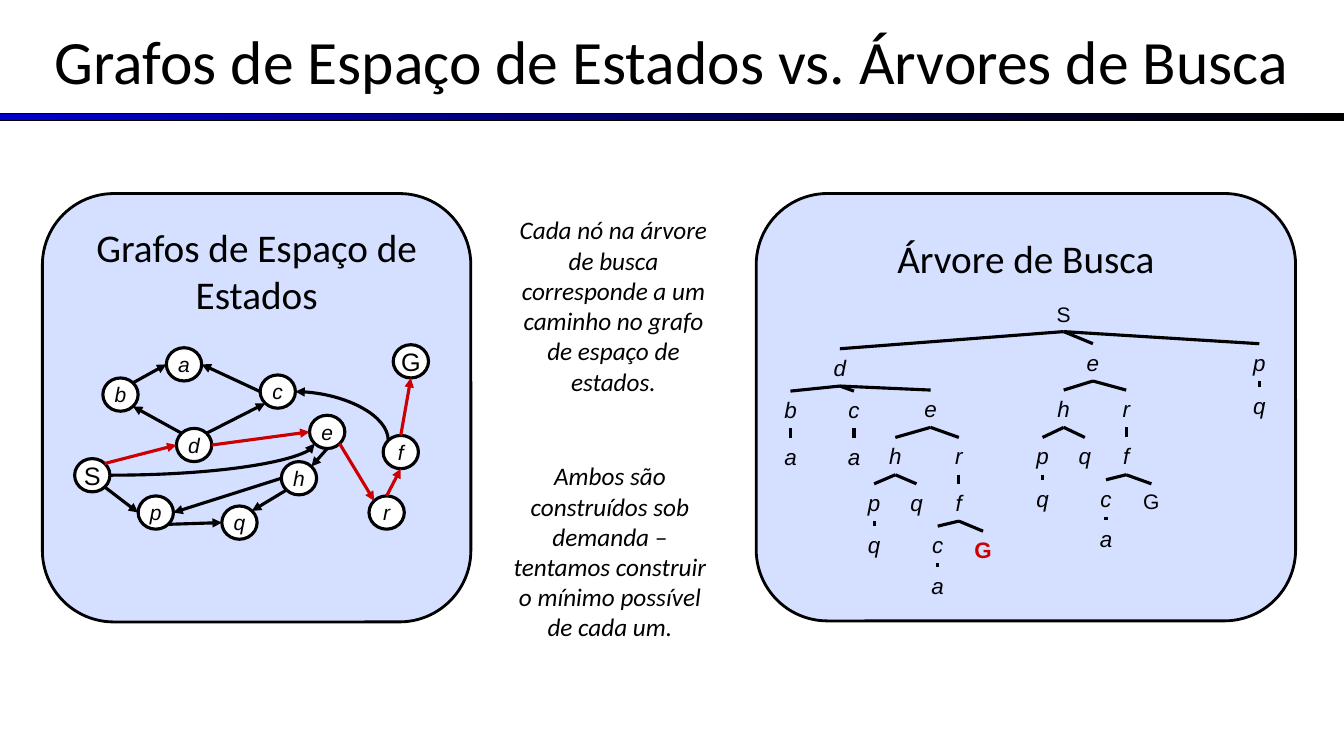
import math
import pptx
import pptx.util
import pptx.dml.color
import pptx.enum.shapes
import pptx.enum.text
import pptx.oxml.ns
import lxml.etree

Inches, Pt = pptx.util.Inches, pptx.util.Pt
SHAPE = pptx.enum.shapes.MSO_SHAPE
CONNECTOR = pptx.enum.shapes.MSO_CONNECTOR
ANCHOR = pptx.enum.text.MSO_ANCHOR
qn = pptx.oxml.ns.qn

COLORS = {"black": "000000", "white": "FFFFFF", "panel": "D5DFFF",
          "red": "CC0000", "blue": "0000CC"}

NODE_W, NODE_H = 0.35, 0.33
LABEL_W, LABEL_H = 0.7, 0.37

# Graph nodes: left and top inside the panel
NODES = {
    "S": (0.32, 2.63), "G": (3.48, 1.5), "d": (1.33, 2.33), "b": (0.6, 1.83),
    "p": (0.95, 3), "q": (1.78, 3.1), "c": (2.16, 1.8), "e": (2.65, 2.2),
    "h": (2.37, 2.66), "a": (1.23, 1.53), "f": (3.38, 2.4), "r": (3.24, 3),
}

# Graph edges: node and compass point at each end
EDGES = [
    ("S", "SE", "p", "W", "black"), ("p", "SE", "q", "W", "black"),
    ("h", "SW", "q", "NE", "black"), ("h", "W", "p", "E", "black"),
    ("e", "S", "h", "NE", "black"), ("e", "SE", "r", "NW", "red"),
    ("r", "N", "f", "S", "red"), ("f", "N", "G", "S", "red"),
    ("S", "NE", "d", "W", "red"), ("d", "NW", "b", "SE", "black"),
    ("b", "NE", "a", "W", "black"), ("c", "W", "a", "E", "black"),
    ("d", "NE", "c", "SW", "black"), ("d", "E", "e", "W", "red"),
]
COMPASS = ["E", "SE", "S", "SW", "W", "NW", "N", "NE"]

# Search tree: label, centre x and top inside the panel, children
TREE = ("S", 3.05, 1.02, [
    ("d", 0.83, 1.54, [
        ("b", 0.34, 1.96, [("a", 0.34, 2.43, [])]),
        ("c", 0.97, 1.96, [("a", 0.97, 2.43, [])]),
        ("e", 1.73, 1.95, [
            ("h", 1.38, 2.42, [
                ("p", 1.17, 2.88, [("q", 1.17, 3.3, [])]),
                ("q", 1.59, 2.88, [])]),
            ("r", 2.01, 2.42, [
                ("f", 2.01, 2.88, [
                    ("c", 1.8, 3.3, [("a", 1.8, 3.71, [])]),
                    ("G*", 2.25, 3.35, [])])])])]),
    ("e", 3.34, 1.49, [
        ("h", 3.05, 1.95, [
            ("p", 2.84, 2.42, [("q", 2.84, 2.84, [])]),
            ("q", 3.26, 2.42, [])]),
        ("r", 3.67, 1.95, [
            ("f", 3.67, 2.42, [
                ("c", 3.47, 2.84, [("a", 3.47, 3.24, [])]),
                ("G", 3.92, 2.88, [])])])]),
    ("p", 4.99, 1.49, [("q", 4.99, 1.92, [])]),
])


def rgb(name):
    return pptx.dml.color.RGBColor.from_string(COLORS[name])


def set_text(sp, text, size, font="Arial", color="black", italic=False, bold=False):
    tf = sp.text_frame
    tf.text = text
    p = tf.paragraphs[0]
    p.alignment = pptx.enum.text.PP_ALIGN.CENTER
    f = p.runs[0].font
    f.name, f.size, f.italic, f.bold = font, Pt(size), italic, bold
    f.color.rgb = rgb(color)
    return tf


def add_label(s, box, text, size, **style):
    sp = s.shapes.add_textbox(*map(Inches, box))
    set_text(sp, text, size, **style).word_wrap = True


def add_box(s, kind, box, fill, width):
    sp = s.shapes.add_shape(kind, *map(Inches, box))
    sp.shadow.inherit = False
    sp.fill.solid()
    sp.fill.fore_color.rgb = rgb(fill)
    sp.line.color.rgb = rgb("black")
    sp.line.width = Pt(width)
    return sp


def add_line(s, start, end, color="black", arrow=False, kind=CONNECTOR.STRAIGHT):
    cx = s.shapes.add_connector(kind, *map(Inches, (*start, *end)))
    cx.line.color.rgb = rgb(color)
    cx.line.width = Pt(2.25)
    spPr = cx.element.spPr
    if arrow:
        lxml.etree.SubElement(spPr.find(qn("a:ln")), qn("a:tailEnd"), type="triangle")
    lxml.etree.SubElement(spPr, qn("a:effectLst"))
    return cx


def add_curve(s, start, end, upright=False):
    """Quarter-bend arrow; an upright one leaves its start vertically."""
    if upright:
        mx, my = (start[0] + end[0]) / 2, (start[1] + end[1]) / 2
        dx, dy = start[0] - mx, start[1] - my
        start, end = (mx + dy, my - dx), (mx - dy, my + dx)
    cx = add_line(s, start, end, arrow=True, kind=CONNECTOR.CURVE)
    spPr = cx.element.spPr
    spPr.find(qn("a:prstGeom")).set("prst", "curvedConnector2")
    if upright:
        spPr.find(qn("a:xfrm")).set("rot", "5400000")


def title_region(s, title, box):
    sp = s.shapes.title
    sp.left, sp.top, sp.width, sp.height = map(Inches, box)
    tf = set_text(sp, title, 44, font="Calibri")
    tf.vertical_anchor = ANCHOR.MIDDLE
    # Gradient rule under the title
    bar = add_box(s, SHAPE.RECTANGLE, (box[0], 1.13, box[2], 0.07), "blue", 0.75)
    bar.fill.gradient()
    bar.fill.gradient_angle = 0
    for stop, color in zip(bar.fill.gradient_stops, ("blue", "black")):
        stop.color.rgb = rgb(color)


def graph_panel(s, box):
    left, top = box[:2]
    add_box(s, SHAPE.ROUNDED_RECTANGLE, box, "panel", 2)
    add_label(s, (left + 0.25, top + 0.25, 3.75, 1.04),
              "Grafos de Espaço de Estados", 28, font="Calibri")

    def site(name, point):
        angle = COMPASS.index(point) * math.pi / 4
        x, y = NODES[name]
        return (left + x + NODE_W / 2 * (1 + math.cos(angle)),
                top + y + NODE_H / 2 * (1 + math.sin(angle)))

    for name, (x, y) in NODES.items():
        sp = add_box(s, SHAPE.FLOWCHART_CONNECTOR,
                     (left + x, top + y, NODE_W, NODE_H), "white", 2.25)
        tf = set_text(sp, name, 18 if name.isupper() else 15, italic=name.islower())
        tf.word_wrap = False
        tf.vertical_anchor = ANCHOR.MIDDLE
    for a, a_point, b, b_point, color in EDGES:
        add_line(s, site(a, a_point), site(b, b_point), color, arrow=True)
    add_curve(s, site("f", "NW"), site("c", "E"), upright=True)
    add_curve(s, site("S", "E"), site("e", "SW"))


def tree_panel(s, box):
    left, top, width = box[:3]
    add_box(s, SHAPE.ROUNDED_RECTANGLE, box, "panel", 2)
    add_label(s, (left, top + 0.36, width, 0.57), "Árvore de Busca", 28, font="Calibri")

    def add_node(node):
        label, x, y, children = node
        goal = label.endswith("*")
        plain = label.isupper() and not goal
        height = 0.35 if plain else LABEL_H
        add_label(s, (left + x - LABEL_W / 2, top + y, LABEL_W, height),
                  label.rstrip("*"), 15 if plain else 16, italic=label.islower(),
                  bold=goal, color="red" if goal else "black")
        for child in children:
            add_line(s, (left + x, top + y + height), (left + child[1], top + child[2]))
            add_node(child)

    add_node(TREE)


def notes_column(s, box):
    left, top, width = box[:3]
    add_label(s, (left + 0.08, top, width - 0.09, 1.92),
              "Cada nó na árvore de busca corresponde a um caminho no grafo "
              "de espaço de estados.", 18, font="Calibri", italic=True)
    add_label(s, (left, top + 2.44, width, 1.92),
              "Ambos são construídos sob demanda – tentamos construir o mínimo "
              "possível de cada um.", 18, font="Calibri", italic=True)


def main():
    prs = pptx.Presentation()
    prs.slide_width, prs.slide_height = Inches(13.33), Inches(7.5)
    s = prs.slides.add_slide(prs.slide_layouts[5])
    title_region(s, "Grafos de Espaço de Estados vs. Árvores de Busca",
                 (0, -0.03, 13.33, 1.25))
    graph_panel(s, (0.42, 1.92, 4.25, 4.25))
    notes_column(s, (4.92, 2.08, 2.26, 4.36))
    tree_panel(s, (7.5, 1.92, 5.35, 4.24))
    prs.save("out.pptx")


if __name__ == "__main__":
    main()
